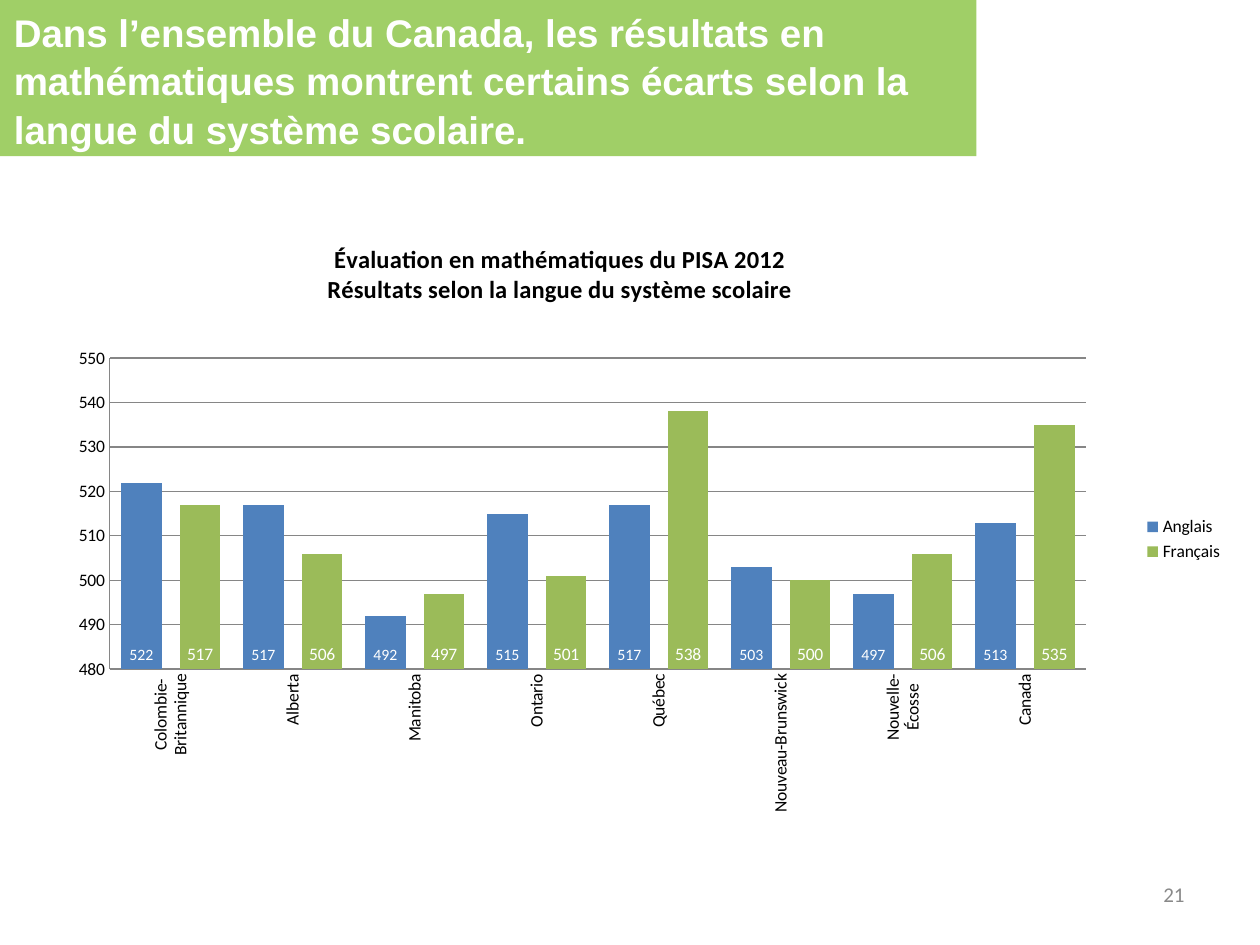
from dataclasses import dataclass

from lxml import etree
from pptx import Presentation
from pptx.chart.data import CategoryChartData
from pptx.dml.color import RGBColor
from pptx.enum.chart import XL_CHART_TYPE, XL_LABEL_POSITION, XL_LEGEND_POSITION, XL_TICK_MARK
from pptx.enum.shapes import MSO_SHAPE
from pptx.enum.text import MSO_ANCHOR, MSO_AUTO_SIZE, PP_ALIGN
from pptx.oxml.ns import qn
from pptx.util import Inches, Pt

COLUMN = XL_CHART_TYPE.COLUMN_CLUSTERED
BASE = XL_LABEL_POSITION.INSIDE_BASE
RIGHT = XL_LEGEND_POSITION.RIGHT
NO_TICK = XL_TICK_MARK.NONE
RECT = MSO_SHAPE.RECTANGLE
TOP, MIDDLE = MSO_ANCHOR.TOP, MSO_ANCHOR.MIDDLE
LEFT_AL, RIGHT_AL, CENTER = PP_ALIGN.LEFT, PP_ALIGN.RIGHT, PP_ALIGN.CENTER
NO_FIT = MSO_AUTO_SIZE.NONE

GREY = "868686"
WHITE = "FFFFFF"
TITLE = (
    "Dans l’ensemble du Canada, les résultats en mathématiques montrent "
    "certains écarts selon la langue du système scolaire."
)
HEADING = (
    "Évaluation en mathématiques du PISA 2012\n"
    "Résultats selon la langue du système scolaire"
)
REGIONS = [
    "Colombie-\nBritannique", "Alberta", "Manitoba", "Ontario",
    "Québec", "Nouveau-Brunswick", "Nouvelle-\nÉcosse", "Canada",
]


@dataclass
class Group:
    name: str
    scores: list[int]
    color: str
    size: int


GROUPS = [
    Group("Anglais", [522, 517, 492, 515, 517, 503, 497, 513], "4F81BD", 9),
    Group("Français", [517, 506, 497, 501, 538, 500, 506, 535], "9BBB59", 10),
]


def rgb(color: str) -> RGBColor:
    return RGBColor.from_string(color)


def style(font, size: float, color: str, face: str = "Calibri", bold: bool = False) -> None:
    font.name = face
    font.size = Pt(size)
    font.bold = bold
    font.color.rgb = rgb(color)


def write(frame, text: str, *, size: float, color: str = "000000", face: str = "Calibri",
          bold: bool = False, align=LEFT_AL, spacing: float = 1.0) -> None:
    frame.text = text
    for para in frame.paragraphs:
        para.alignment = align
        para.line_spacing = spacing
        for run in para.runs:
            style(run.font, size, color, face, bold)


def place(shape, left: float, top: float, width: float, height: float) -> None:
    shape.left, shape.top = Inches(left), Inches(top)
    shape.width, shape.height = Inches(width), Inches(height)


def arrange(parent, index: int, **values) -> None:
    for old in parent.findall(qn("c:layout")):
        parent.remove(old)
    layout = etree.Element(qn("c:layout"))
    manual = etree.SubElement(layout, qn("c:manualLayout"))
    for key, value in values.items():
        etree.SubElement(manual, qn(f"c:{key}")).set("val", str(value))
    parent.insert(index, layout)


def draw_header(slide) -> None:
    band = slide.shapes.add_shape(RECT, 0, 0, Inches(7.75), Inches(1.24))
    band.shadow.inherit = False
    band.fill.solid()
    band.fill.fore_color.rgb = rgb("A0CF67")
    band.line.fill.background()
    slide.shapes._spTree.insert(2, band._element)

    title = slide.shapes.title
    place(title, 0.01, 0, 7.66, 0.78)
    frame = title.text_frame
    frame.word_wrap = True
    frame.auto_size = NO_FIT
    frame.vertical_anchor = TOP
    write(frame, TITLE, size=22, color=WHITE, face="Arial", bold=True, spacing=1.05)


def draw_chart(slide) -> None:
    data = CategoryChartData()
    data.categories = REGIONS
    for group in GROUPS:
        data.add_series(group.name, group.scores)
    chart = slide.shapes.add_chart(
        COLUMN, Inches(0.28), Inches(1.74), Inches(9.53), Inches(5.08), data
    ).chart
    style(chart.font, 10, "000000")

    chart.has_title = True
    write(chart.chart_title.text_frame, HEADING, size=14, bold=True, align=CENTER)
    arrange(chart.chart_title._element, 1, xMode="edge", yMode="edge", x=0.24, y=0.03)
    arrange(chart._chartSpace.chart.plotArea, 0, layoutTarget="inner",
            xMode="edge", yMode="edge", x=0.062, y=0.217, w=0.813, h=0.486)

    chart.has_legend = True
    chart.legend.position = RIGHT
    chart.legend.include_in_layout = False

    regions, scale = chart.category_axis, chart.value_axis
    for axis in (regions, scale):
        axis.major_tick_mark = NO_TICK
        axis.minor_tick_mark = NO_TICK
        axis.format.line.color.rgb = rgb(GREY)
        style(axis.tick_labels.font, 10, "000000")
    turn = regions._element.find(qn("c:txPr")).find(qn("a:bodyPr"))
    turn.set("rot", "-5400000")
    turn.set("vert", "horz")
    scale.minimum_scale, scale.maximum_scale, scale.major_unit = 480, 550, 10
    scale.has_major_gridlines = True
    scale.major_gridlines.format.line.color.rgb = rgb(GREY)

    plot = chart.plots[0]
    plot.gap_width, plot.overlap = 56, -45
    plot.vary_by_categories = False
    for series, group in zip(plot.series, GROUPS):
        series.format.fill.solid()
        series.format.fill.fore_color.rgb = rgb(group.color)
        labels = series.data_labels
        labels.show_value = True
        labels.position = BASE
        style(labels.font, group.size, WHITE)


def draw_number(slide) -> None:
    box = slide.shapes.add_textbox(Inches(8.83), Inches(6.9), Inches(0.67), Inches(0.4))
    box.text_frame.word_wrap = True
    box.text_frame.vertical_anchor = MIDDLE
    write(box.text_frame, "21", size=12, color="898989", align=RIGHT_AL)


def main() -> None:
    deck = Presentation()
    deck.slide_width, deck.slide_height = Inches(10), Inches(7.5)
    slide = deck.slides.add_slide(deck.slide_layouts[5])
    draw_header(slide)
    draw_chart(slide)
    draw_number(slide)
    deck.save("out.pptx")


if __name__ == "__main__":
    main()
